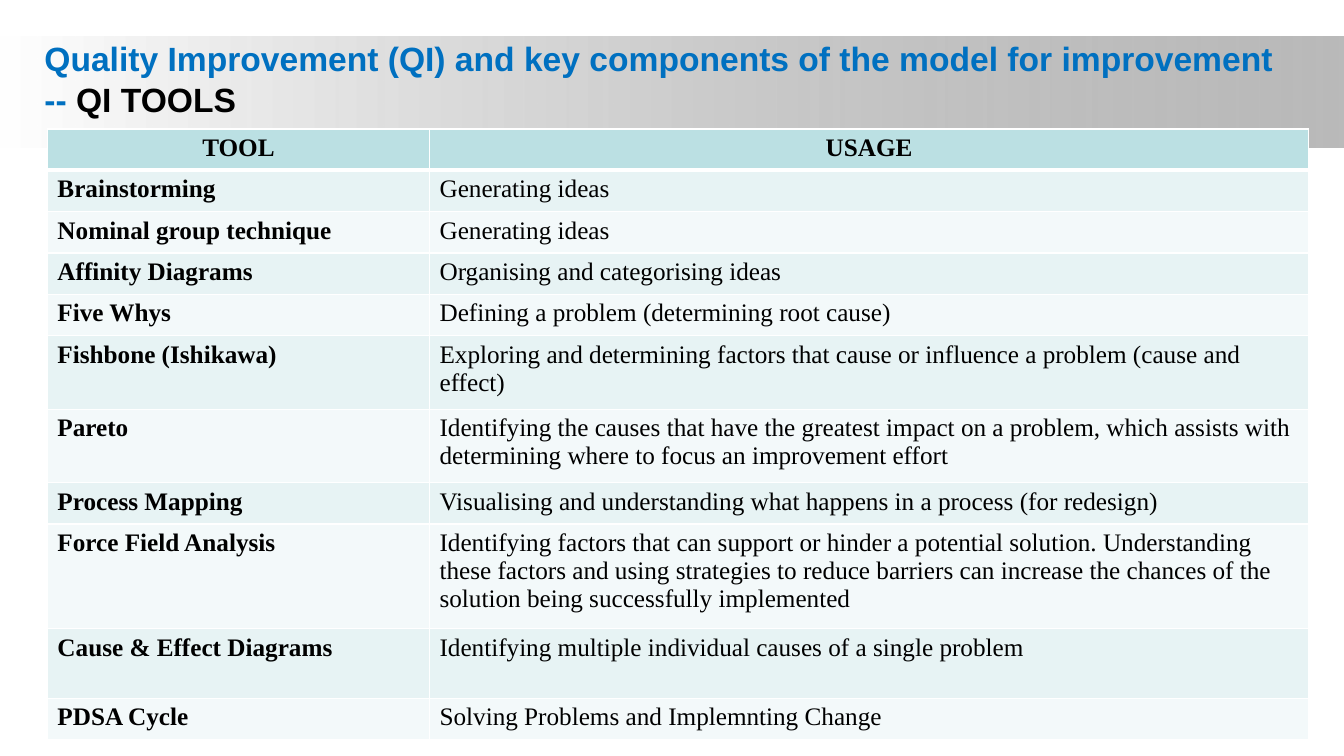
from lxml.etree import SubElement
from pptx import Presentation
from pptx.dml.color import RGBColor
from pptx.enum.shapes import MSO_SHAPE
from pptx.enum.text import MSO_ANCHOR, PP_ALIGN
from pptx.oxml.ns import qn
from pptx.util import Inches, Pt

TOOLS = [
    ("Brainstorming", "Generating ideas", 0.41),
    ("Nominal group technique", "Generating ideas", 0.41),
    ("Affinity Diagrams", "Organising and categorising ideas", 0.41),
    ("Five Whys", "Defining a problem (determining root cause)", 0.41),
    ("Fishbone (Ishikawa)",
     "Exploring and determining factors that cause or influence a problem "
     "(cause and effect)", 0.73),
    ("Pareto",
     "Identifying the causes that have the greatest impact on a problem, which "
     "assists with determining where to focus an improvement effort", 0.73),
    ("Process Mapping",
     "Visualising and understanding what happens in a process (for redesign)", 0.41),
    ("Force Field Analysis",
     "Identifying factors that can support or hinder a potential solution. "
     "Understanding these factors and using strategies to reduce barriers can "
     "increase the chances of the solution being successfully implemented", 1.04),
    ("Cause & Effect Diagrams",
     "Identifying multiple individual causes of a single problem", 0.69),
    ("PDSA Cycle", "Solving Problems and Implemnting Change", 0.41),
]
COLUMN_WIDTHS = (3.79, 8.72)
HEADER_FILL = "BBE0E3"
BAND_FILLS = ("E7F3F4", "F3F9FA")


def color(hex_string):
    return RGBColor.from_string(hex_string)


def format_run(run, font_name, size, hex_color, bold):
    run.font.name = font_name
    run.font.size = Pt(size)
    run.font.color.rgb = color(hex_color)
    run.font.bold = bold


def add_title(slide):
    title = slide.shapes.title
    title.left, title.top = Inches(0.34), Inches(0.3)
    title.width, title.height = Inches(12.64), Inches(1.35)
    frame = title.text_frame
    frame.word_wrap = True
    frame.vertical_anchor = MSO_ANCHOR.TOP
    frame.margin_top = Inches(0.08)
    paragraph = frame.paragraphs[0]
    paragraph.alignment = PP_ALIGN.LEFT
    parts = (
        ("Quality Improvement (QI) and key components of the model for improvement -- ",
         "0070C0"),
        ("QI TOOLS", "000000"),
    )
    for text, hex_color in parts:
        run = paragraph.add_run()
        run.text = text
        format_run(run, "Arial", 24, hex_color, True)


def add_title_band(slide):
    band = slide.shapes.add_shape(
        MSO_SHAPE.RECTANGLE, 0, Inches(0.36), Inches(13.33), Inches(1.1))
    band.shadow.inherit = False
    band.line.fill.background()
    band.fill.gradient()
    band.fill.gradient_angle = 0
    start, end = band.fill.gradient_stops
    start.color.rgb, start.position = color("FFFFFF"), 0
    end.color.rgb, end.position = color("808080"), 1
    # Let the grey end show 54 % opaque
    for grey in band.element.iter(qn("a:srgbClr")):
        if grey.get("val") == "808080":
            SubElement(grey, qn("a:alpha"), val="54000")
    # Keep the band behind the title
    slide.shapes.title.element.addprevious(band.element)


def set_borders(cell, top=1, bottom=1):
    properties = cell._tc.get_or_add_tcPr()
    for side, width in (("L", 1), ("R", 1), ("T", top), ("B", bottom)):
        line = SubElement(properties, qn(f"a:ln{side}"), w=str(Pt(width)))
        fill = SubElement(line, qn("a:solidFill"))
        SubElement(fill, qn("a:srgbClr"), val="FFFFFF")


def fill_cell(cell, text, fill, bold, alignment, top=1, bottom=1):
    set_borders(cell, top, bottom)
    cell.fill.solid()
    cell.fill.fore_color.rgb = color(fill)
    cell.text_frame.text = text
    paragraph = cell.text_frame.paragraphs[0]
    paragraph.alignment = alignment
    format_run(paragraph.runs[0], "Times New Roman", 18, "000000", bold)


def add_tools_table(slide):
    heights = [0.41] + [height for _, _, height in TOOLS]
    table = slide.shapes.add_table(
        len(heights), 2, Inches(0.47), Inches(1.28),
        Inches(sum(COLUMN_WIDTHS)), Inches(sum(heights))).table
    for column, width in zip(table.columns, COLUMN_WIDTHS):
        column.width = Inches(width)
    for row, height in zip(table.rows, heights):
        row.height = Inches(height)

    # Header row, with a thick rule below
    for index, heading in enumerate(("TOOL", "USAGE")):
        fill_cell(table.cell(0, index), heading, HEADER_FILL, True,
                  PP_ALIGN.CENTER, bottom=3)

    # Tool rows in alternating bands
    for number, (tool, usage, _) in enumerate(TOOLS, start=1):
        fill = BAND_FILLS[(number - 1) % 2]
        top = 3 if number == 1 else 1
        fill_cell(table.cell(number, 0), tool, fill, True, PP_ALIGN.LEFT, top)
        fill_cell(table.cell(number, 1), usage, fill, False, PP_ALIGN.LEFT, top)


def main():
    presentation = Presentation()
    presentation.slide_width = Inches(13.33)
    presentation.slide_height = Inches(7.5)
    slide = presentation.slides.add_slide(presentation.slide_layouts[5])
    add_title(slide)
    add_title_band(slide)
    add_tools_table(slide)
    presentation.save("out.pptx")


if __name__ == "__main__":
    main()
